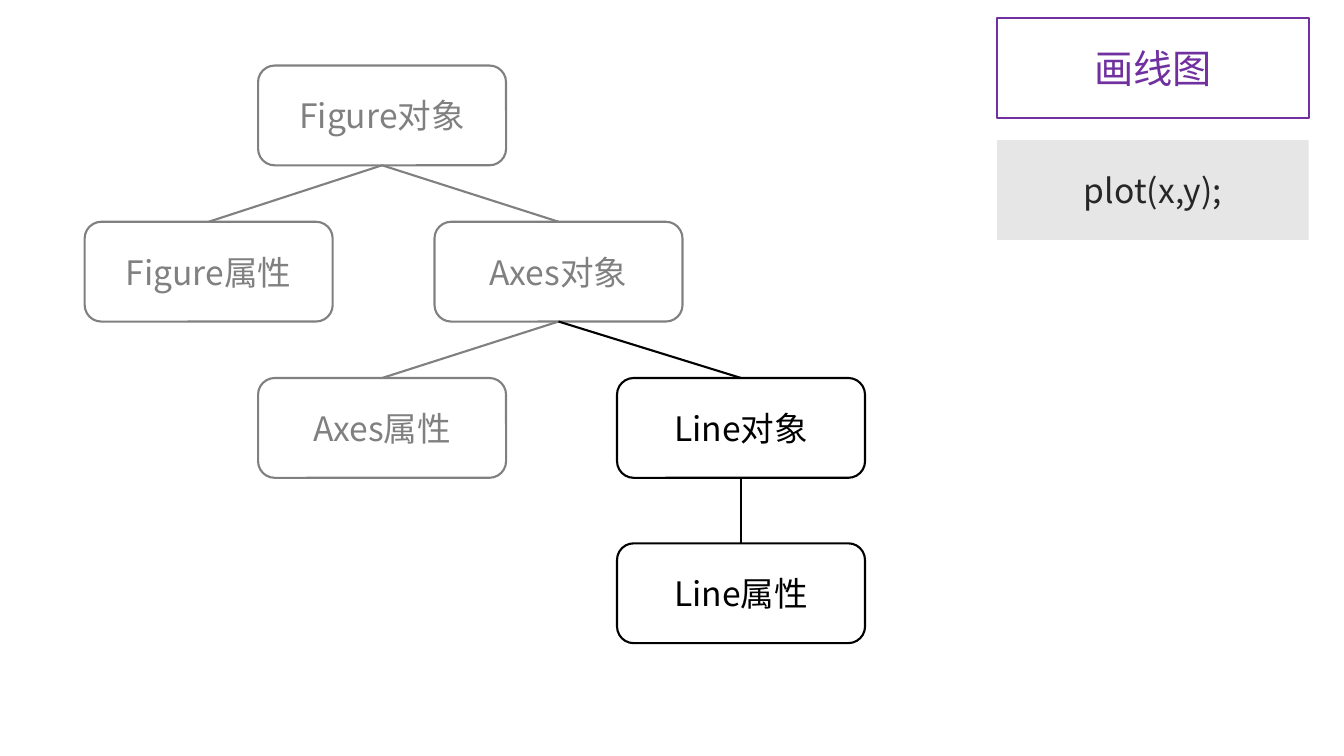
from dataclasses import dataclass
from typing import Any

from lxml import etree
from pptx import Presentation
from pptx.dml.color import RGBColor
from pptx.enum.shapes import MSO_CONNECTOR, MSO_SHAPE
from pptx.enum.text import MSO_ANCHOR, MSO_AUTO_SIZE, PP_ALIGN
from pptx.oxml.ns import qn
from pptx.util import Emu, Pt

ROUNDED = MSO_SHAPE.ROUNDED_RECTANGLE
RECTANGLE = MSO_SHAPE.RECTANGLE
STRAIGHT = MSO_CONNECTOR.STRAIGHT
MIDDLE = MSO_ANCHOR.MIDDLE
CENTER = PP_ALIGN.CENTER
NO_AUTOFIT = MSO_AUTO_SIZE.NONE

EMU_PER_PX = 9144
SLIDE_WIDTH, SLIDE_HEIGHT = 1333, 750
TITLE_ONLY_LAYOUT = 5
TOP_SITE, BOTTOM_SITE = 0, 2

NODE_WIDTH, BOX_HEIGHT = 246, 99
PANEL_LEFT, PANEL_WIDTH = 989, 309
TITLE_TOP, CODE_TOP = 18, 139
TITLE_CORNER = 12100


@dataclass(frozen=True)
class Theme:
    font: str = "Noto Sans CJK SC"
    muted: str = "808080"
    active: str = "000000"
    accent: str = "7030A0"
    code_text: str = "262626"
    code_fill: str = "E7E6E6"
    paper: str = "FFFFFF"
    title_size: int = 28
    body_size: int = 24
    line_width: float = 1.5


@dataclass(frozen=True)
class Node:
    label: str
    left: int
    top: int
    color: str


@dataclass(frozen=True)
class Branch:
    parent: str
    child: str
    color: str


THEME = Theme()

NODES = (
    Node("Figure对象", 256, 65, THEME.muted),
    Node("Figure属性", 84, 220, THEME.muted),
    Node("Axes对象", 431, 220, THEME.muted),
    Node("Axes属性", 256, 375, THEME.muted),
    Node("Line对象", 612, 375, THEME.active),
    Node("Line属性", 612, 539, THEME.active),
)

BRANCHES = (
    Branch("Figure对象", "Figure属性", THEME.muted),
    Branch("Figure对象", "Axes对象", THEME.muted),
    Branch("Axes对象", "Axes属性", THEME.muted),
    Branch("Axes对象", "Line对象", THEME.active),
    Branch("Line对象", "Line属性", THEME.active),
)


def px(length: int) -> Emu:
    return Emu(length * EMU_PER_PX)


def apply_format(target: Any, values: dict[str, Any]) -> None:
    for attribute, value in values.items():
        setattr(target, attribute, value)


def place(box: Any, left: int, top: int, width: int) -> None:
    apply_format(box, {
        "left": px(left), "top": px(top),
        "width": px(width), "height": px(BOX_HEIGHT),
    })


def paint(box: Any, fill: str) -> None:
    box.fill.solid()
    box.fill.fore_color.rgb = RGBColor.from_string(fill)


def outline(item: Any, color: str) -> None:
    item.line.color.rgb = RGBColor.from_string(color)
    item.line.width = Pt(THEME.line_width)


def write(box: Any, wording: str, color: str, size: int) -> None:
    frame = box.text_frame
    apply_format(frame, {
        "vertical_anchor": MIDDLE, "word_wrap": True, "auto_size": NO_AUTOFIT,
    })
    paragraph = frame.paragraphs[0]
    paragraph.alignment = CENTER
    run = paragraph.add_run()
    run.text = wording
    apply_format(run.font, {"name": THEME.font, "size": Pt(size)})
    run.font.color.rgb = RGBColor.from_string(color)
    east_asian = etree.SubElement(run.font._element, qn("a:ea"))
    east_asian.set("typeface", THEME.font)


def round_title(title: Any) -> None:
    geometry = etree.Element(qn("a:prstGeom"), prst="roundRect")
    guides = etree.SubElement(geometry, qn("a:avLst"))
    etree.SubElement(guides, qn("a:gd"), name="adj", fmla=f"val {TITLE_CORNER}")
    title._element.spPr.insert(1, geometry)


def draw_title(slide: Any) -> None:
    title = slide.shapes.title
    place(title, PANEL_LEFT, TITLE_TOP, PANEL_WIDTH)
    round_title(title)
    paint(title, THEME.paper)
    outline(title, THEME.accent)
    write(title, "画线图", THEME.accent, THEME.title_size)


def draw_code(slide: Any) -> None:
    code = slide.shapes.add_shape(
        RECTANGLE, px(PANEL_LEFT), px(CODE_TOP), px(PANEL_WIDTH), px(BOX_HEIGHT))
    code.shadow.inherit = False
    paint(code, THEME.code_fill)
    code.line.fill.background()
    write(code, "plot(x,y);", THEME.code_text, THEME.body_size)


def draw_node(slide: Any, node: Node) -> Any:
    box = slide.shapes.add_shape(
        ROUNDED, px(node.left), px(node.top), px(NODE_WIDTH), px(BOX_HEIGHT))
    box.shadow.inherit = False
    paint(box, THEME.paper)
    outline(box, node.color)
    write(box, node.label, node.color, THEME.body_size)
    return box


def draw_branch(slide: Any, branch: Branch, boxes: dict[str, Any]) -> None:
    link = slide.shapes.add_connector(STRAIGHT, 0, 0, 0, 0)
    link.begin_connect(boxes[branch.parent], BOTTOM_SITE)
    link.end_connect(boxes[branch.child], TOP_SITE)
    outline(link, branch.color)
    etree.SubElement(link._element.spPr, qn("a:effectLst"))


def main() -> None:
    deck = Presentation()
    apply_format(deck, {
        "slide_width": px(SLIDE_WIDTH), "slide_height": px(SLIDE_HEIGHT),
    })
    slide = deck.slides.add_slide(deck.slide_layouts[TITLE_ONLY_LAYOUT])
    draw_title(slide)
    draw_code(slide)
    boxes = {node.label: draw_node(slide, node) for node in NODES}
    for branch in BRANCHES:
        draw_branch(slide, branch, boxes)
    deck.save("out.pptx")


if __name__ == "__main__":
    main()
